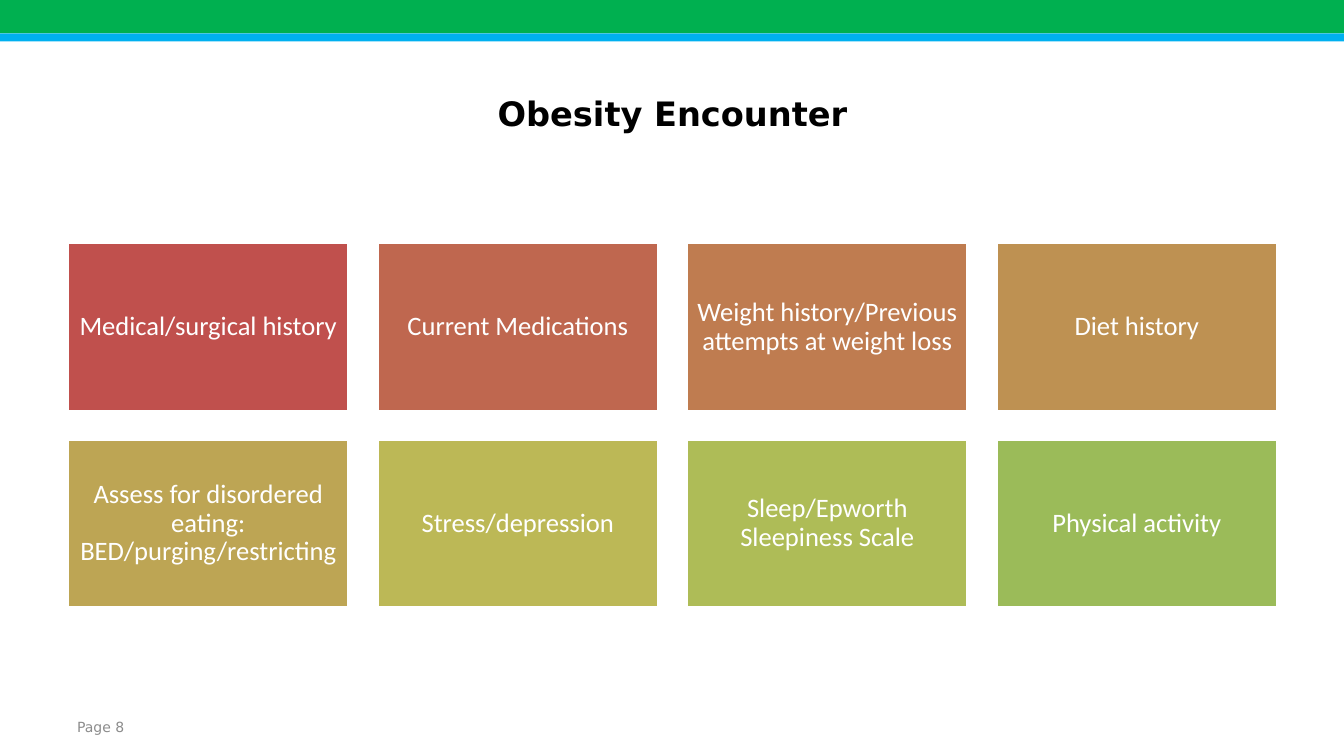
from dataclasses import dataclass

from pptx import Presentation
from pptx.dml.color import RGBColor
from pptx.enum.shapes import MSO_SHAPE
from pptx.enum.text import MSO_ANCHOR, PP_ALIGN
from pptx.util import Inches, Pt


@dataclass(frozen=True)
class Theme:
    green: str = "00B050"
    blue: str = "00B0F0"
    black: str = "000000"
    white: str = "FFFFFF"
    grey: str = "8C8C8C"
    heading_font: str = "DejaVu Sans"
    tile_font: str = "Calibri"
    title_size: int = 24
    tile_size: int = 19
    page_size: int = 10


THEME = Theme()

TOPICS = [
    ("Medical/surgical history", "C0504D"),
    ("Current Medications", "BF674F"),
    ("Weight history/Previous attempts at weight loss", "BF7C50"),
    ("Diet history", "BE9152"),
    ("Assess for disordered eating: BED/purging/restricting", "BDA554"),
    ("Stress/depression", "BCB856"),
    ("Sleep/Epworth Sleepiness Scale", "AEBC57"),
    ("Physical activity", "9BBB59"),
]
COLUMNS = 4
GRID_LEFT, GRID_TOP = 0.67, 2.41
TILE_WIDTH, TILE_HEIGHT = 2.79, 1.67
GAP = 0.28


def write(shape, text, font, size, color, align, bold=False):
    """Fill a shape with one vertically centred paragraph and return it."""
    frame = shape.text_frame
    frame.word_wrap = True
    frame.vertical_anchor = MSO_ANCHOR.MIDDLE
    frame.text = text
    para = frame.paragraphs[0]
    para.alignment = align
    para.font.name = font
    para.font.size = Pt(size)
    para.font.bold = bold
    para.font.color.rgb = RGBColor.from_string(color)
    return para


def add_rectangle(page, left, top, width, height, fill):
    box = page.shapes.add_shape(
        MSO_SHAPE.RECTANGLE, Inches(left), Inches(top), Inches(width), Inches(height))
    box.shadow.inherit = False
    box.fill.solid()
    box.fill.fore_color.rgb = RGBColor.from_string(fill)
    box.line.fill.background()
    return box


def add_tile(page, index, text, fill):
    row, column = divmod(index, COLUMNS)
    tile = add_rectangle(
        page,
        GRID_LEFT + column * (TILE_WIDTH + GAP),
        GRID_TOP + row * (TILE_HEIGHT + GAP),
        TILE_WIDTH, TILE_HEIGHT, fill)
    tile.line.color.rgb = RGBColor.from_string(THEME.white)
    tile.line.width = Pt(2)
    frame = tile.text_frame
    frame.margin_left = frame.margin_right = Inches(0.08)
    frame.margin_top = frame.margin_bottom = Inches(0.08)
    para = write(tile, text, THEME.tile_font, THEME.tile_size, THEME.white, PP_ALIGN.CENTER)
    para.line_spacing = 0.9


def set_title(page, text):
    title = page.shapes.title
    title.left, title.top = Inches(0.67), Inches(0.5)
    title.width, title.height = Inches(12), Inches(1.25)
    write(title, text, THEME.heading_font, THEME.title_size, THEME.black,
          PP_ALIGN.CENTER, bold=True)


def add_page_label(page, text):
    label = page.shapes.add_textbox(Inches(0.16), Inches(7.01), Inches(1.17), Inches(0.4))
    write(label, text, THEME.heading_font, THEME.page_size, THEME.grey, PP_ALIGN.RIGHT)


def main():
    deck = Presentation()
    deck.slide_width, deck.slide_height = Inches(13.33), Inches(7.5)
    page = deck.slides.add_slide(deck.slide_layouts[5])
    add_rectangle(page, 0, 0.33, 13.33, 0.08, THEME.blue)
    add_rectangle(page, 0, 0, 13.33, 0.33, THEME.green)
    add_page_label(page, "Page 8")
    set_title(page, "Obesity Encounter")
    for index, (text, fill) in enumerate(TOPICS):
        add_tile(page, index, text, fill)
    deck.save("out.pptx")


if __name__ == "__main__":
    main()
